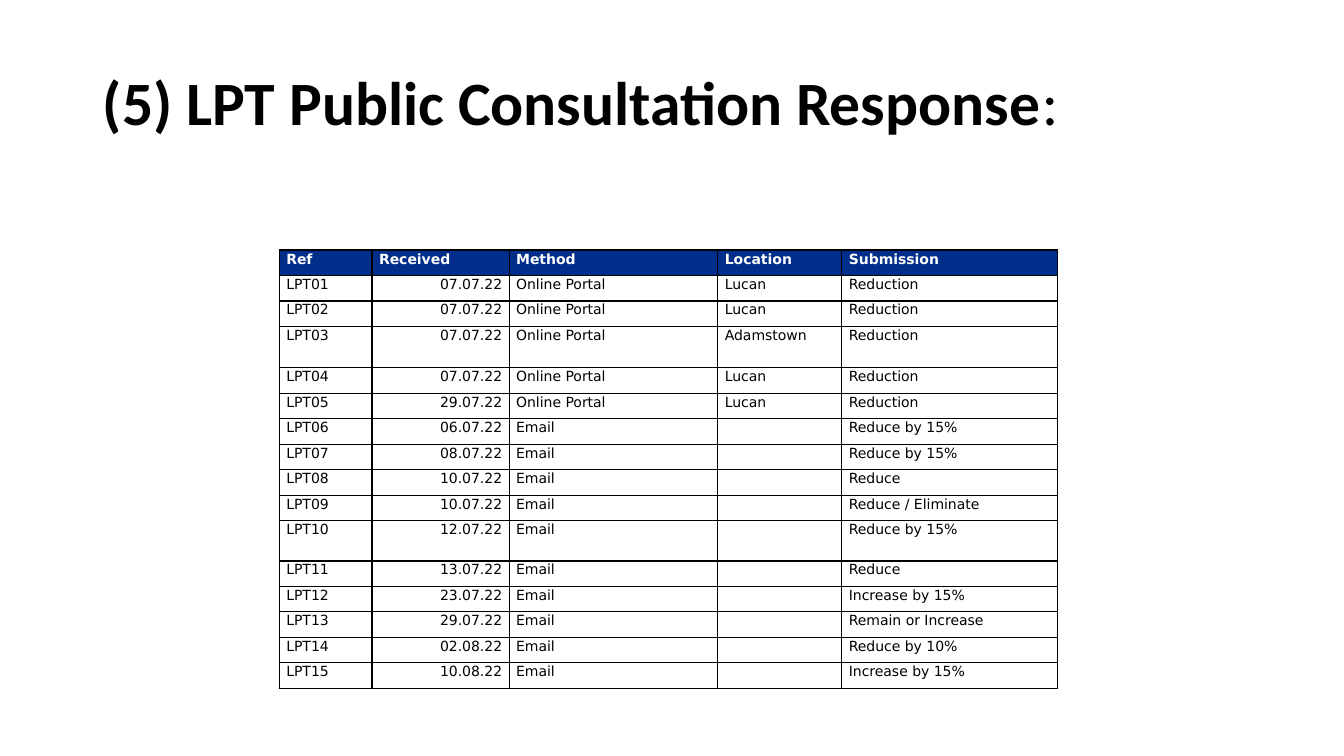
"""Build the LPT public consultation response slide."""
from dataclasses import dataclass

from lxml.etree import SubElement
from pptx import Presentation
from pptx.dml.color import RGBColor
from pptx.enum.text import MSO_ANCHOR, PP_ALIGN
from pptx.oxml.ns import qn
from pptx.slide import Slide
from pptx.table import _Cell as Cell
from pptx.text.text import _Paragraph as Paragraph
from pptx.util import Inches, Pt


@dataclass(frozen=True)
class Theme:
    """Colours, fonts and type sizes of the slide."""
    black: str = "000000"
    white: str = "FFFFFF"
    navy: str = "002E8A"
    title_font: str = "Calibri"
    table_font: str = "DejaVu Sans"
    title_size: int = 44
    table_size: int = 10
    border_width: int = 1


@dataclass(frozen=True)
class Column:
    """Heading, width and body alignment of a table column."""
    heading: str
    width: float
    align: PP_ALIGN = PP_ALIGN.LEFT


@dataclass(frozen=True)
class Response:
    """One submission to the consultation."""
    received: str
    method: str
    location: str
    submission: str


THEME = Theme()
COLUMNS = (
    Column("Ref", 0.92),
    Column("Received", 1.36, PP_ALIGN.RIGHT),
    Column("Method", 2.07),
    Column("Location", 1.23),
    Column("Submission", 2.14),
)
PORTAL, EMAIL = "Online Portal", "Email"
RESPONSES = (
    Response("07.07.22", PORTAL, "Lucan", "Reduction"),
    Response("07.07.22", PORTAL, "Lucan", "Reduction"),
    Response("07.07.22", PORTAL, "Adamstown", "Reduction"),
    Response("07.07.22", PORTAL, "Lucan", "Reduction"),
    Response("29.07.22", PORTAL, "Lucan", "Reduction"),
    Response("06.07.22", EMAIL, "", "Reduce by 15%"),
    Response("08.07.22", EMAIL, "", "Reduce by 15%"),
    Response("10.07.22", EMAIL, "", "Reduce"),
    Response("10.07.22", EMAIL, "", "Reduce / Eliminate"),
    Response("12.07.22", EMAIL, "", "Reduce by 15%"),
    Response("13.07.22", EMAIL, "", "Reduce"),
    Response("23.07.22", EMAIL, "", "Increase by 15%"),
    Response("29.07.22", EMAIL, "", "Remain or Increase"),
    Response("02.08.22", EMAIL, "", "Reduce by 10%"),
    Response("10.08.22", EMAIL, "", "Increase by 15%"),
)
TABLE_LEFT, TABLE_TOP, TABLE_HEIGHT = 2.77, 2.48, 4.35
TALL_ROWS = {3: 0.41, 10: 0.4}


def add_run(paragraph: Paragraph, text: str, font_name: str, size: int,
            color: str, bold: bool) -> None:
    """Add one formatted run to a paragraph."""
    run = paragraph.add_run()
    run.text = text
    run.font.name = font_name
    run.font.size = Pt(size)
    run.font.bold = bold
    run.font.color.rgb = RGBColor.from_string(color)


def draw_title(slide: Slide) -> None:
    """Place and fill the title placeholder."""
    title = slide.shapes.title
    title.left, title.top = Inches(0.92), Inches(0.32)
    title.width, title.height = Inches(11.5), Inches(1.45)
    frame = title.text_frame
    frame.word_wrap = True
    frame.vertical_anchor = MSO_ANCHOR.MIDDLE
    paragraph = frame.paragraphs[0]
    paragraph.alignment = PP_ALIGN.LEFT
    paragraph.line_spacing = 0.9
    for text, bold in (("(5) LPT Public Consultation Response", True), (":", False)):
        add_run(paragraph, text, THEME.title_font, THEME.title_size, THEME.black, bold)


def add_borders(cell: Cell) -> None:
    """Outline a cell on all four sides."""
    properties = cell._tc.get_or_add_tcPr()
    for side in ("a:lnL", "a:lnR", "a:lnT", "a:lnB"):
        line = SubElement(properties, qn(side), w=str(Pt(THEME.border_width)))
        fill = SubElement(line, qn("a:solidFill"))
        SubElement(fill, qn("a:srgbClr"), val=THEME.black)


def fill_cell(cell: Cell, text: str, align: PP_ALIGN, header: bool) -> None:
    """Write and format one table cell."""
    cell.margin_left = cell.margin_right = Inches(0.07)
    cell.margin_top = cell.margin_bottom = Inches(0)
    add_borders(cell)
    if header:
        cell.fill.solid()
        cell.fill.fore_color.rgb = RGBColor.from_string(THEME.navy)
    else:
        cell.fill.background()
    paragraph = cell.text_frame.paragraphs[0]
    paragraph.alignment = align
    paragraph.line_spacing = 1.07
    if text:
        color = THEME.white if header else THEME.black
        add_run(paragraph, text, THEME.table_font, THEME.table_size, color, header)
    else:
        SubElement(paragraph._p, qn("a:endParaRPr"), sz=str(THEME.table_size * 100))


def draw_table(slide: Slide) -> None:
    """Draw the table of numbered responses."""
    rows = [tuple(column.heading for column in COLUMNS)]
    rows += [(f"LPT{number:02}", item.received, item.method, item.location, item.submission)
             for number, item in enumerate(RESPONSES, start=1)]
    width = sum(column.width for column in COLUMNS)
    table = slide.shapes.add_table(
        len(rows), len(COLUMNS), Inches(TABLE_LEFT), Inches(TABLE_TOP),
        Inches(width), Inches(TABLE_HEIGHT)).table
    table.horz_banding = False
    for table_column, column in zip(table.columns, COLUMNS):
        table_column.width = Inches(column.width)
    row_height = (TABLE_HEIGHT - sum(TALL_ROWS.values())) / (len(rows) - len(TALL_ROWS))
    for row_index, texts in enumerate(rows):
        table.rows[row_index].height = Inches(TALL_ROWS.get(row_index, row_height))
        header = row_index == 0
        for column_index, (column, text) in enumerate(zip(COLUMNS, texts)):
            align = PP_ALIGN.LEFT if header else column.align
            fill_cell(table.cell(row_index, column_index), text, align, header)


def main() -> None:
    """Create and save the presentation."""
    presentation = Presentation()
    presentation.slide_width, presentation.slide_height = Inches(13.33), Inches(7.5)
    slide = presentation.slides.add_slide(presentation.slide_layouts[5])
    draw_title(slide)
    draw_table(slide)
    presentation.save("out.pptx")


if __name__ == "__main__":
    main()
